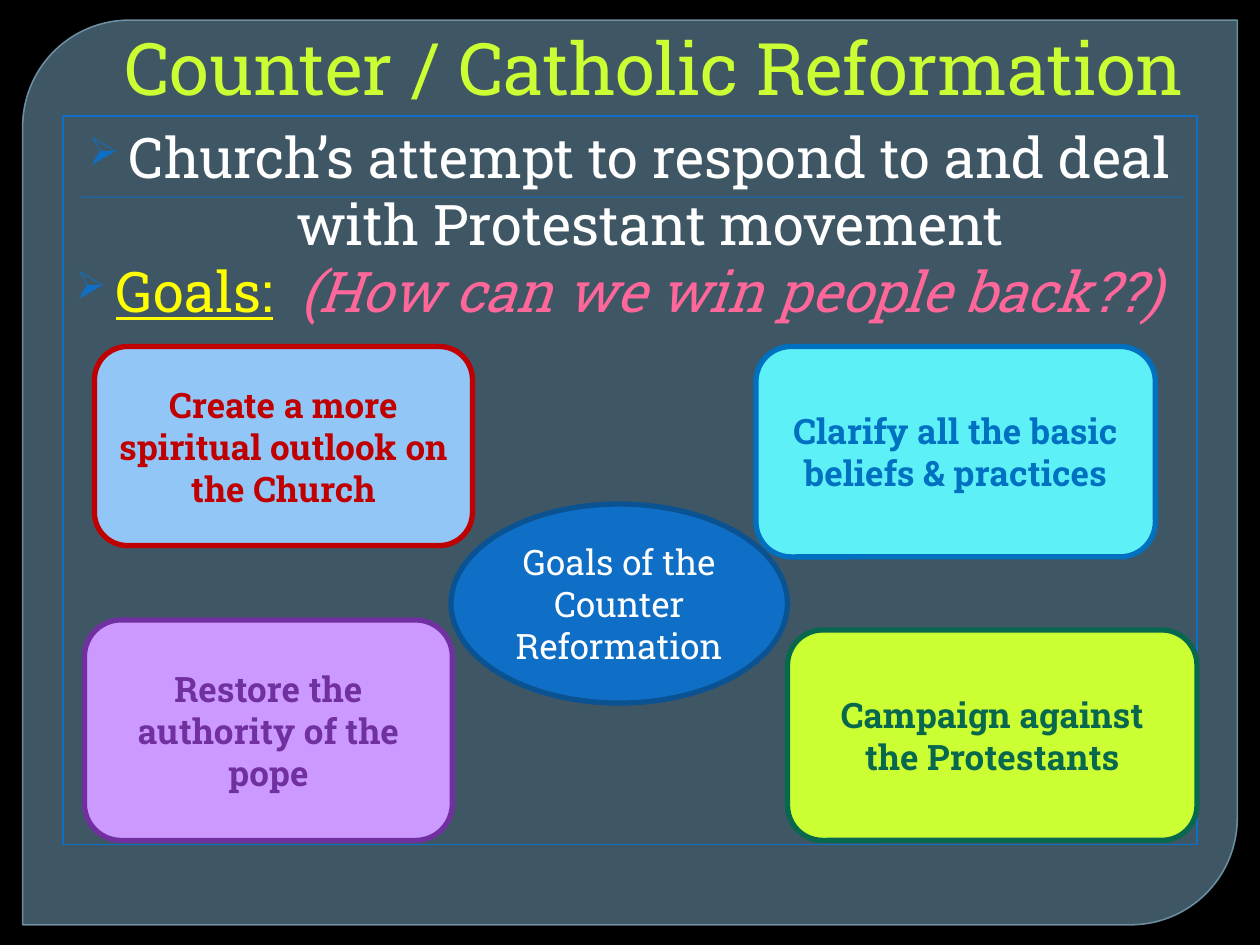
from pptx import Presentation
from pptx.dml.color import RGBColor
from pptx.enum.shapes import MSO_SHAPE
from pptx.enum.text import MSO_ANCHOR, MSO_AUTO_SIZE, PP_ALIGN
from pptx.oxml.ns import qn
from pptx.util import Inches, Pt
from lxml import etree

RECT, ROUND, OVAL = MSO_SHAPE.RECTANGLE, MSO_SHAPE.ROUNDED_RECTANGLE, MSO_SHAPE.OVAL
PANEL = MSO_SHAPE.ROUND_2_DIAG_RECTANGLE
TOP, MIDDLE, BOTTOM = MSO_ANCHOR.TOP, MSO_ANCHOR.MIDDLE, MSO_ANCHOR.BOTTOM
LEFT, CENTER, RIGHT = PP_ALIGN.LEFT, PP_ALIGN.CENTER, PP_ALIGN.RIGHT

THEME = dict(
    font="Roboto Slab", title_size=41.4, body_size=32, box_size=20,
    bg="000000", panel="61869C", panel_line="779BB2", accent="0F6FC6",
    accent_dark="0B5292", text="FFFFFF", lime="CCFF33", yellow="FFFF00", pink="FF6699",
)

TITLE = "Counter / Catholic Reformation"
BODY = [
    (CENTER, [("Church’s attempt to respond to and deal with Protestant movement", {})]),
    (LEFT, [
        ("Goals:", dict(color=THEME["yellow"], underline=True)),
        ("  ", {}),
        ("(How can we win people back??)", dict(color=THEME["pink"], italic=True)),
    ]),
]
HUB = ("Goals of the Counter Reformation", (3.58, 4, 2.67, 1.58))
GOALS = [
    ("Create a more spiritual outlook on the Church", (0.75, 2.75, 3, 1.58), "91C6F7", "C00000"),
    ("Clarify all the basic beliefs & practices", (6, 2.75, 3.17, 1.67), "5EF0F7", "0070C0"),
    ("Restore the authority of the pope", (0.67, 4.92, 2.92, 1.75), "CC99FF", "7030A0"),
    ("Campaign against the Protestants", (6.25, 5, 3.25, 1.67), THEME["lime"], "08684E"),
]


def rgb(color):
    return RGBColor.from_string(color)


def set_alpha(fill_parent, percent):
    color = fill_parent.find(qn("a:solidFill"))[0]
    etree.SubElement(color, qn("a:alpha")).set("val", str(percent * 1000))


def add_box(s, kind, at, fill=None, line=None, width=0.75):
    sp = s.shapes.add_shape(kind, *map(Inches, at))
    sp.shadow.inherit = False
    if fill:
        sp.fill.solid()
        sp.fill.fore_color.rgb = rgb(fill)
    else:
        sp.fill.background()
    if line:
        sp.line.color.rgb = rgb(line)
        sp.line.width = Pt(width)
    else:
        sp.line.fill.background()
    return sp


def set_frame(sp, anchor):
    tf = sp.text_frame
    tf.word_wrap = True
    tf.auto_size = MSO_AUTO_SIZE.NONE
    tf.vertical_anchor = anchor
    return tf


def add_text(p, text, size, color=THEME["text"], align=CENTER, **style):
    p.alignment = align
    r = p.add_run()
    r.text = text
    r.font.name = THEME["font"]
    r.font.size = Pt(size)
    r.font.color.rgb = rgb(color)
    for name, value in style.items():
        setattr(r.font, name, value)


def add_bullet(p, char, color, percent, indent):
    pPr = p._p.get_or_add_pPr()
    pPr.set("marL", str(Inches(indent)))
    pPr.set("indent", str(-Inches(indent)))
    bu_color = etree.SubElement(pPr, qn("a:buClr"))
    etree.SubElement(bu_color, qn("a:srgbClr")).set("val", color)
    etree.SubElement(pPr, qn("a:buSzPct")).set("val", str(percent * 1000))
    etree.SubElement(pPr, qn("a:buChar")).set("char", char)


def add_background(s):
    s.background.fill.solid()
    s.background.fill.fore_color.rgb = rgb(THEME["bg"])
    panel = add_box(s, PANEL, (0.18, 0.16, 9.64, 7.18), THEME["panel"], THEME["panel_line"], 0.87)
    panel.adjustments[0] = 0.118
    panel.adjustments[1] = 0
    props = panel.element.spPr
    set_alpha(props, 65)
    set_alpha(props.find(qn("a:ln")), 88)
    add_box(s, RECT, (0.64, 1.56, 8.75, 0.01), THEME["accent"])


def add_title(s):
    title = s.shapes.title
    title.element.getparent().append(title.element)
    title.left, title.top, title.width, title.height = map(Inches, (0.5, 0.3, 9, 0.62))
    p = set_frame(title, BOTTOM).paragraphs[0]
    add_text(p, TITLE, THEME["title_size"], THEME["lime"], RIGHT)


def add_body(s):
    tf = set_frame(add_box(s, RECT, (0.5, 0.92, 9, 5.78), line=THEME["accent"]), TOP)
    for i, (align, runs) in enumerate(BODY):
        p = tf.add_paragraph() if i else tf.paragraphs[0]
        add_bullet(p, "➢", THEME["accent"], 70, 0.32)
        for text, style in runs:
            add_text(p, text, THEME["body_size"], align=align, **style)


def add_goal(s, kind, text, at, fill, line, color, bold):
    sp = add_box(s, kind, at, fill, line, 3)
    p = set_frame(sp, MIDDLE).paragraphs[0]
    add_text(p, text, THEME["box_size"], color, bold=bold)


def main():
    prs = Presentation()
    prs.slide_width, prs.slide_height = Inches(10), Inches(7.5)
    s = prs.slides.add_slide(prs.slide_layouts[5])
    add_background(s)
    add_title(s)
    add_body(s)
    for text, at, fill, ink in GOALS:
        add_goal(s, ROUND, text, at, fill, ink, ink, True)
    add_goal(s, OVAL, *HUB, THEME["accent"], THEME["accent_dark"], THEME["text"], False)
    prs.save("out.pptx")


if __name__ == "__main__":
    main()
